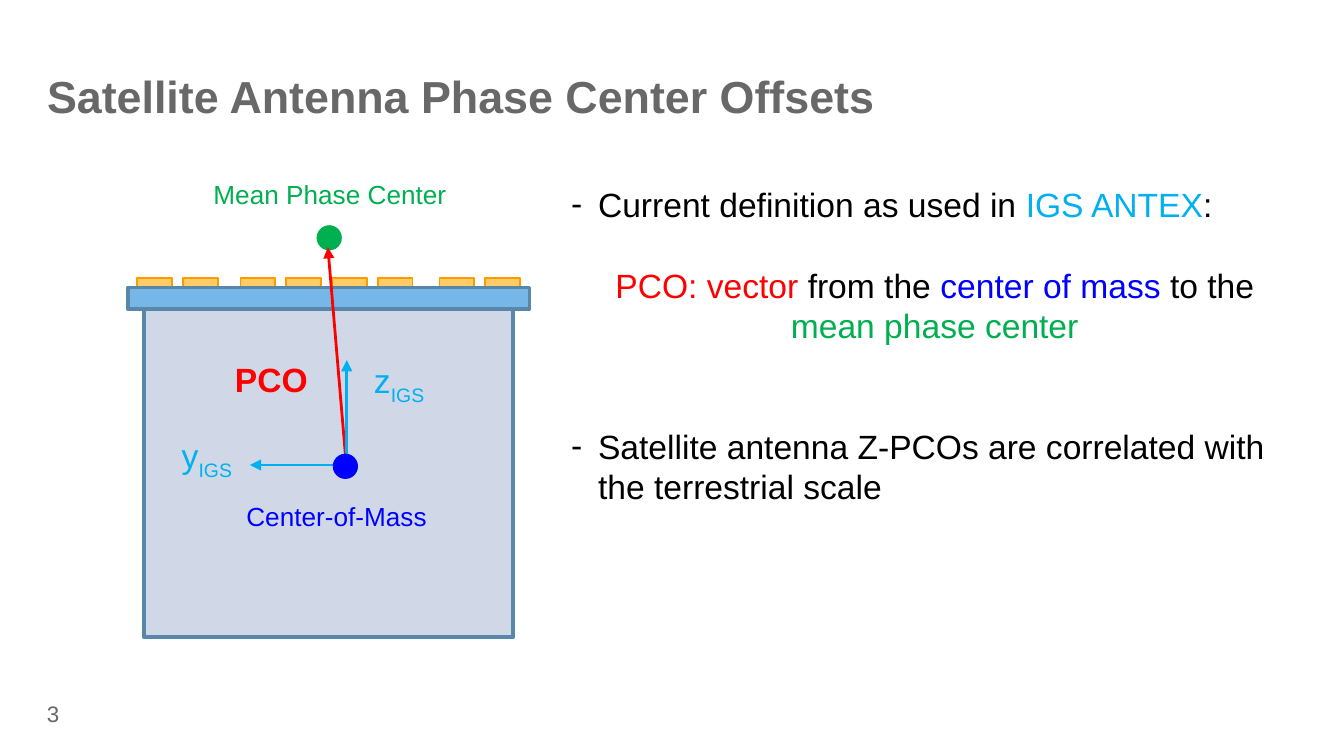
from lxml import etree
from pptx import Presentation
from pptx.dml.color import RGBColor
from pptx.enum.shapes import MSO_CONNECTOR, MSO_SHAPE
from pptx.enum.text import PP_ALIGN
from pptx.oxml.ns import qn
from pptx.util import Inches, Pt

LEFT, CENTER = PP_ALIGN.LEFT, PP_ALIGN.CENTER
RECTANGLE, OVAL = MSO_SHAPE.RECTANGLE, MSO_SHAPE.OVAL
STRAIGHT = MSO_CONNECTOR.STRAIGHT

THEME = {
    "font": "Arial",
    "title": 24, "body": 18, "label": 14, "number": 12,
    "line_factor": 1.2, "label_spacing": 26,
    "gray": "686868", "black": "000000", "red": "FF0000", "blue": "0000FF",
    "green": "00B050", "cyan": "00B0F0", "steel": "5887AA", "bus": "D0D8E8",
    "panel": "77B7E7", "tile": "FFCC66", "orange": "FF9900",
}

# Content
TITLE = "Satellite Antenna Phase Center Offsets"
PAGE_NUMBER = "3"
# (bulleted, blank lines above, runs of text and colour)
BODY = [
    (True, 0, [("Current definition as used in ", "black"),
               ("IGS ANTEX", "cyan"), (":", "black")]),
    (False, 1, [("PCO: vector ", "red"), ("from the ", "black"),
                ("center of mass ", "blue"), ("to the ", "black"),
                ("mean phase center", "green")]),
    (True, 2, [("Satellite antenna Z-PCOs are correlated with "
                "the terrestrial scale", "black")]),
]
# (left, top, width, text, subscript, size, colour, bold, alignment)
LABELS = [
    (1.49, 3.55, 2.03, "Center-of-Mass", "", "label", "blue", False, CENTER),
    (1.49, 1.15, 2.03, "Mean Phase Center", "", "label", "green", False, LEFT),
    (1.65, 2.56, 0.81, "PCO", "", "body", "red", True, LEFT),
    (2.64, 2.61, 0.66, "z", "IGS", "body", "cyan", False, CENTER),
    (1.21, 3.17, 0.66, "y", "IGS", "body", "cyan", False, CENTER),
]
# (start, end, colour)
ARROWS = [
    ((2.57, 3.38), (2.44, 1.84), "red"),
    ((2.58, 3.46), (2.58, 2.68), "cyan"),
    ((2.57, 3.46), (1.86, 3.46), "cyan"),
]
# Antenna tiles: (left of the group, number of tiles)
TILE_GROUPS = [(1.02, 2), (1.79, 4), (3.27, 2)]
TILE_PITCH, TILE_WIDTH, TILE_TOP = 0.34, 0.26, 2.07
THICKNESS = 0.16  # tiles, panel and both dots
LABEL_HEIGHT = 0.46
BULLET_INDENT = 0.2


def color(name):
    return RGBColor.from_string(THEME[name])


def add_box(kind, left, top, width, height, fill, line, weight=2):
    shape = slide.shapes.add_shape(
        kind, Inches(left), Inches(top), Inches(width), Inches(height))
    shape.shadow.inherit = False
    shape.fill.solid()
    shape.fill.fore_color.rgb = color(fill)
    shape.line.color.rgb = color(line)
    shape.line.width = Pt(weight)


def add_text_frame(left, top, width, height, side=0, edge=0):
    box = slide.shapes.add_textbox(
        Inches(left), Inches(top), Inches(width), Inches(height))
    frame = box.text_frame
    frame.word_wrap = True
    frame.margin_left = frame.margin_right = Inches(side)
    frame.margin_top = frame.margin_bottom = Inches(edge)
    return frame


def style(paragraph, size, name=None, bold=False, spacing=None):
    points = THEME[size]
    paragraph.line_spacing = Pt(spacing or points * THEME["line_factor"])
    paragraph.font.name = THEME["font"]
    paragraph.font.size = Pt(points)
    paragraph.font.bold = bold
    if name:
        paragraph.font.color.rgb = color(name)


def add_bullet(paragraph):
    properties = paragraph._p.get_or_add_pPr()
    properties.set("marL", str(Inches(BULLET_INDENT)))
    properties.set("indent", str(-Inches(BULLET_INDENT)))
    bullet_color = etree.SubElement(properties, qn("a:buClr"))
    etree.SubElement(bullet_color, qn("a:srgbClr"), val=THEME["black"])
    etree.SubElement(properties, qn("a:buFont"), typeface=THEME["font"])
    etree.SubElement(properties, qn("a:buChar"), char="-")


def add_arrow(start, end, name):
    arrow = slide.shapes.add_connector(
        STRAIGHT, *(Inches(value) for value in start + end))
    arrow.line.color.rgb = color(name)
    arrow.line.width = Pt(1.5)
    etree.SubElement(arrow.line._get_or_add_ln(), qn("a:tailEnd"), type="triangle")
    etree.SubElement(arrow._element.spPr, qn("a:effectLst"))


# Widescreen slide, 16 to 9
presentation = Presentation()
presentation.slide_width = Inches(10)
presentation.slide_height = Inches(10) * 9 // 16
slide = presentation.slides.add_slide(presentation.slide_layouts[6])

# Title and page number
for place, text, size, bold in [
    ((0.35, 0.51, 9.29, 0.6), TITLE, "title", True),
    ((0.35, 5.21, 1.5, 0.35), PAGE_NUMBER, "number", False),
]:
    paragraph = add_text_frame(*place).paragraphs[0]
    paragraph.text = text
    style(paragraph, size, "gray", bold)

# Satellite: bus, antenna tiles, panel
add_box(RECTANGLE, 1.07, 2.3, 2.75, 2.44, "bus", "steel")
for group_left, count in TILE_GROUPS:
    for index in range(count):
        add_box(RECTANGLE, group_left + index * TILE_PITCH, TILE_TOP,
                TILE_WIDTH, THICKNESS, "tile", "orange", 1)
add_box(RECTANGLE, 0.95, 2.14, 2.99, THICKNESS, "panel", "steel")

# Phase center, vectors, center of mass
add_box(OVAL, 2.37, 1.69, THICKNESS, THICKNESS, "green", "green")
for start, end, name in ARROWS:
    add_arrow(start, end, name)
add_box(OVAL, 2.49, 3.39, THICKNESS, THICKNESS, "blue", "blue")

# Labels of the drawing
for left, top, width, text, subscript, size, name, bold, alignment in LABELS:
    frame = add_text_frame(left, top, width, LABEL_HEIGHT, 0.1, 0.05)
    paragraph = frame.paragraphs[0]
    paragraph.alignment = alignment
    paragraph.add_run().text = text
    if subscript:
        run = paragraph.add_run()
        run.text = subscript
        run.font._element.set("baseline", "-25000")
    style(paragraph, size, name, bold, THEME["label_spacing"])

# Explanation
frame = add_text_frame(4.25, 1.37, 5.41, 3.45)
for index, (bulleted, blank_lines, runs) in enumerate(BODY):
    paragraph = frame.add_paragraph() if index else frame.paragraphs[0]
    if bulleted:
        add_bullet(paragraph)
    else:
        paragraph.alignment = CENTER
    style(paragraph, "body")
    if blank_lines:
        paragraph.space_before = blank_lines * paragraph.line_spacing
    for text, name in runs:
        run = paragraph.add_run()
        run.text = text
        run.font.color.rgb = color(name)

presentation.save("out.pptx")
